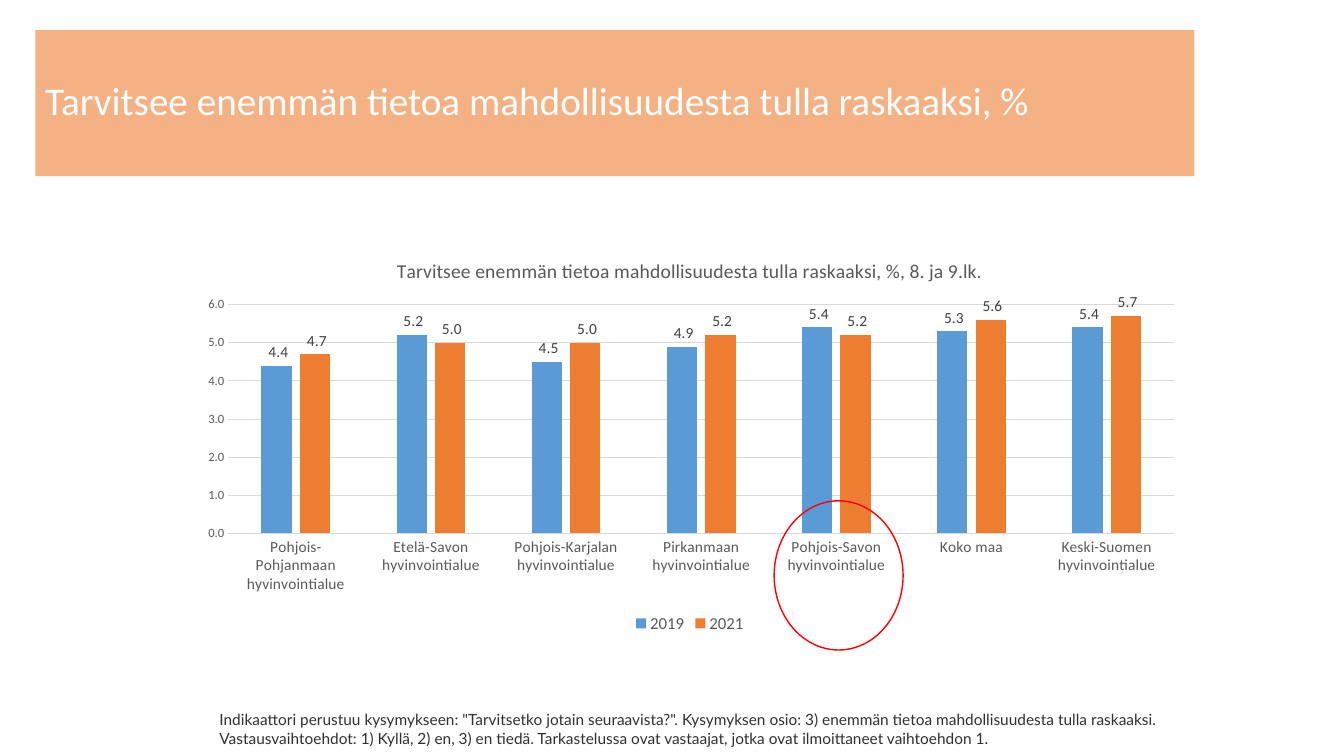
from lxml import etree
from pptx import Presentation
from pptx.chart.data import CategoryChartData
from pptx.dml.color import RGBColor
from pptx.enum import chart as charts, shapes, text
from pptx.util import Cm, Pt

WHITE = RGBColor(0xFF, 0xFF, 0xFF)
PEACH = RGBColor(0xF4, 0xB1, 0x83)
BLUE = RGBColor(0x5B, 0x9B, 0xD5)
ORANGE = RGBColor(0xED, 0x7D, 0x31)
RED = RGBColor(0xFF, 0x00, 0x00)
INK = RGBColor(0x30, 0x30, 0x30)
LABEL_GREY = RGBColor(0x40, 0x40, 0x40)
AXIS_GREY = RGBColor(0x59, 0x59, 0x59)
GRID_GREY = RGBColor(0xD9, 0xD9, 0xD9)
NUMBER_FORMAT = r"#\ ##0.0"

HEADING = "Tarvitsee enemmän tietoa mahdollisuudesta tulla raskaaksi, %"
FOOTNOTE = (
    'Indikaattori perustuu kysymykseen: "Tarvitsetko jotain seuraavista?". '
    "Kysymyksen osio: 3) enemmän tietoa mahdollisuudesta tulla raskaaksi. "
    "Vastausvaihtoehdot: 1) Kyllä, 2) en, 3) en tiedä. "
    "Tarkastelussa ovat vastaajat, jotka ovat ilmoittaneet vaihtoehdon 1."
)
REGIONS = [
    "Pohjois-Pohjanmaan hyvinvointialue",
    "Etelä-Savon hyvinvointialue",
    "Pohjois-Karjalan hyvinvointialue",
    "Pirkanmaan hyvinvointialue",
    "Pohjois-Savon hyvinvointialue",
    "Koko maa",
    "Keski-Suomen hyvinvointialue",
]
YEARS = {
    "2019": ([4.4, 5.2, 4.5, 4.9, 5.4, 5.3, 5.4], BLUE),
    "2021": ([4.7, 5.0, 5.0, 5.2, 5.2, 5.6, 5.7], ORANGE),
}


def set_font(font, size, color, name="Calibri"):
    font.name = name
    font.size = Pt(size)
    font.bold = False
    font.color.rgb = color


def write(box, words, size, color, name="Calibri"):
    box.text_frame.word_wrap = True
    para = box.text_frame.paragraphs[0]
    para.text = words
    para.alignment = text.PP_ALIGN.LEFT
    set_font(para.font, size, color, name)
    return para


def add_banner(page):
    banner = page.shapes.add_shape(
        shapes.MSO_SHAPE.RECTANGLE, Cm(0.89), Cm(0.76), Cm(29.21), Cm(3.68))
    banner.shadow.inherit = False
    banner.fill.solid()
    banner.fill.fore_color.rgb = PEACH
    banner.line.fill.background()
    banner.text_frame.vertical_anchor = text.MSO_ANCHOR.MIDDLE
    write(banner, HEADING, 28, WHITE).line_spacing = 0.9


def add_footnote(page):
    box = page.shapes.add_textbox(Cm(5.28), Cm(17.78), Cm(25.12), Cm(1.19))
    write(box, FOOTNOTE, 11, INK, "Lato")


def add_ring(page):
    ring = page.shapes.add_shape(
        shapes.MSO_SHAPE.OVAL, Cm(19.51), Cm(12.62), Cm(3.25), Cm(3.76))
    ring.shadow.inherit = False
    ring.fill.background()
    ring.line.color.rgb = RED
    ring.line.width = Pt(1)


def style_line(line):
    line.color.rgb = GRID_GREY
    line.width = Pt(0.75)


def style_axes(chart):
    for axis, size in ((chart.category_axis, 11), (chart.value_axis, 9)):
        axis.major_tick_mark = charts.XL_TICK_MARK.NONE
        axis.minor_tick_mark = charts.XL_TICK_MARK.NONE
        set_font(axis.tick_labels.font, size, AXIS_GREY)
    style_line(chart.category_axis.format.line)
    values = chart.value_axis
    values.minimum_scale, values.maximum_scale, values.major_unit = 0, 6, 1
    values.format.line.fill.background()
    style_line(values.major_gridlines.format.line)
    values.tick_labels.number_format = NUMBER_FORMAT
    values.tick_labels.number_format_is_linked = False


def style_series(series, color):
    series.format.fill.solid()
    series.format.fill.fore_color.rgb = color
    labels = series.data_labels
    labels.show_value = True
    labels.position = charts.XL_LABEL_POSITION.OUTSIDE_END
    labels.number_format = NUMBER_FORMAT
    labels.number_format_is_linked = False
    set_font(labels.font, 11, LABEL_GREY)


def add_region_chart(page):
    data = CategoryChartData(number_format=NUMBER_FORMAT)
    data.categories = REGIONS
    for year, (shares, color) in YEARS.items():
        data.add_series(year, shares)
    chart = page.shapes.add_chart(
        charts.XL_CHART_TYPE.COLUMN_CLUSTERED,
        Cm(4.67), Cm(6.05), Cm(25.43), Cm(10.01), data).chart
    set_font(chart.font, 10, AXIS_GREY)
    chart.has_title = True
    title = chart.chart_title.text_frame.paragraphs[0]
    title.text = HEADING + ", 8. ja 9.lk."
    set_font(title.font, 14, AXIS_GREY)
    chart.chart_title.include_in_layout = False
    chart.has_legend = True
    chart.legend.position = charts.XL_LEGEND_POSITION.BOTTOM
    chart.legend.include_in_layout = False
    set_font(chart.legend.font, 12, AXIS_GREY)
    plot = chart.plots[0]
    plot.gap_width, plot.overlap, plot.vary_by_categories = 219, -27, False
    for series, (shares, color) in zip(plot.series, YEARS.values()):
        style_series(series, color)
    style_axes(chart)


def main():
    deck = Presentation()
    deck.slide_width, deck.slide_height = Cm(33.87), Cm(19.05)
    page = deck.slides.add_slide(deck.slide_layouts[6])
    add_banner(page)
    add_footnote(page)
    add_region_chart(page)
    add_ring(page)
    deck.save("out.pptx")


if __name__ == "__main__":
    main()
